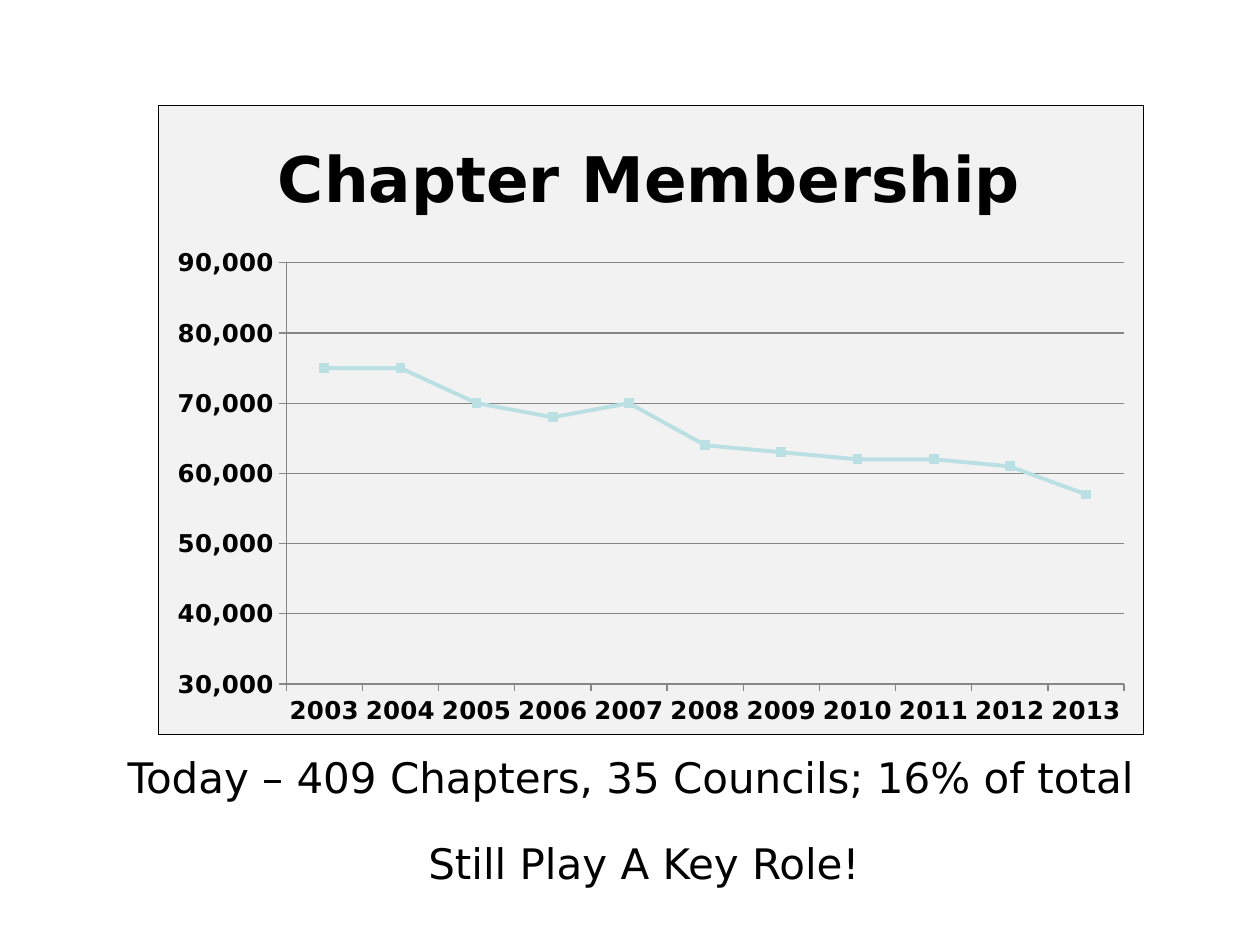
from lxml import etree
from pptx import Presentation
from pptx.chart.data import CategoryChartData
from pptx.dml.color import RGBColor
from pptx.enum.chart import XL_CHART_TYPE as CT, XL_MARKER_STYLE as MS, XL_TICK_MARK as TM
from pptx.enum.text import MSO_ANCHOR, MSO_AUTO_SIZE, PP_ALIGN
from pptx.oxml import parse_xml
from pptx.oxml.ns import nsdecls, qn
from pptx.util import Pt

FONT = "DejaVu Sans"
YEARS = range(2003, 2014)
MEMBERS = [75000, 75000, 70000, 68000, 70000, 64000, 63000, 62000, 62000, 61000, 57000]


def rgb(color):
    """Turn a hex string into a colour."""
    return RGBColor.from_string(color)


def style_font(font, size, bold=False):
    """Set the slide's typeface in black."""
    font.name, font.size, font.bold = FONT, Pt(size), bold
    font.color.rgb = rgb("000000")


def style_line(line, color, width):
    """Set the colour and width of a line."""
    line.color.rgb = rgb(color)
    line.width = Pt(width)


def set_layout(parent, index, **places):
    """Give a chart part a manual layout in fractions of the chart."""
    for old in parent.findall(qn("c:layout")):
        parent.remove(old)
    layout = etree.Element(qn("c:layout"))
    manual = etree.SubElement(layout, qn("c:manualLayout"))
    if "w" in places:
        etree.SubElement(manual, qn("c:layoutTarget")).set("val", "inner")
    for mode in ("xMode", "yMode"):
        etree.SubElement(manual, qn(f"c:{mode}")).set("val", "edge")
    for name, value in places.items():
        etree.SubElement(manual, qn(f"c:{name}")).set("val", str(value))
    parent.insert(index, layout)


def frame_chart(chart, fill, border, width):
    """Fill and outline the chart area."""
    sp_pr = parse_xml(
        f'<c:spPr {nsdecls("c", "a")}><a:solidFill><a:srgbClr val="{fill}"/></a:solidFill>'
        f'<a:ln w="{Pt(width)}"><a:solidFill><a:srgbClr val="{border}"/></a:solidFill></a:ln></c:spPr>')
    chart._chartSpace.chart.addnext(sp_pr)


def add_membership_chart(slide, x, y, w, h):
    """Add the membership line chart in the given box."""
    data = CategoryChartData(number_format="#,##0")
    data.categories = [str(year) for year in YEARS]
    data.add_series("Chapter Membership", MEMBERS)
    chart = slide.shapes.add_chart(CT.LINE_MARKERS, Pt(x), Pt(y), Pt(w), Pt(h), data).chart
    chart.has_legend = False
    style_font(chart.font, 10)
    frame_chart(chart, "F2F2F2", "000000", 0.75)

    chart.has_title = True
    title = chart.chart_title
    title.include_in_layout = False
    p = title.text_frame.paragraphs[0]
    p.text = "Chapter Membership"
    style_font(p.font, 36, True)
    style_font(p.runs[0].font, 36, True)
    set_layout(title._element, 1, x=0.11, y=0.03)
    set_layout(chart._chartSpace.chart.plotArea, 0, x=0.13, y=0.25, w=0.85, h=0.67)

    for axis in (chart.category_axis, chart.value_axis):
        axis.major_tick_mark, axis.minor_tick_mark = TM.OUTSIDE, TM.NONE
        style_font(axis.tick_labels.font, 14, True)
        style_line(axis.format.line, "868686", 0.75)
    values = chart.value_axis
    values.minimum_scale, values.maximum_scale, values.major_unit = 30000, 90000, 10000
    values.tick_labels.number_format = "#,##0"
    values.tick_labels.number_format_is_linked = False
    values.has_major_gridlines = True
    style_line(values.major_gridlines.format.line, "868686", 0.75)

    plot = chart.plots[0]
    plot.vary_by_categories = False
    series = plot.series[0]
    series.smooth = False
    style_line(series.format.line, "BBE0E3", 2.25)
    marker = series.marker
    marker.style, marker.size = MS.SQUARE, 5
    marker.format.fill.solid()
    marker.format.fill.fore_color.rgb = rgb("BBE0E3")
    style_line(marker.format.line, "BBE0E3", 0.75)


def add_caption(slide, text, x, y, w, h):
    """Add one centred line of text in the given box."""
    tf = slide.shapes.add_textbox(Pt(x), Pt(y), Pt(w), Pt(h)).text_frame
    tf.word_wrap = False
    tf.auto_size = MSO_AUTO_SIZE.SHAPE_TO_FIT_TEXT
    tf.vertical_anchor = MSO_ANCHOR.TOP
    p = tf.paragraphs[0]
    p.text = text
    p.alignment = PP_ALIGN.CENTER
    style_font(p.font, 24)


def main():
    """Build and save the slide."""
    prs = Presentation()
    prs.slide_width, prs.slide_height = Pt(720), Pt(540)
    slide = prs.slides.add_slide(prs.slide_layouts[6])
    add_membership_chart(slide, 90, 60, 564, 360)
    add_caption(slide, "Today – 409 Chapters, 35 Councils; 16% of total", 54.5, 426, 612, 36)
    add_caption(slide, "Still Play A Key Role!", 234, 475, 268, 36)
    prs.save("out.pptx")


if __name__ == "__main__":
    main()
